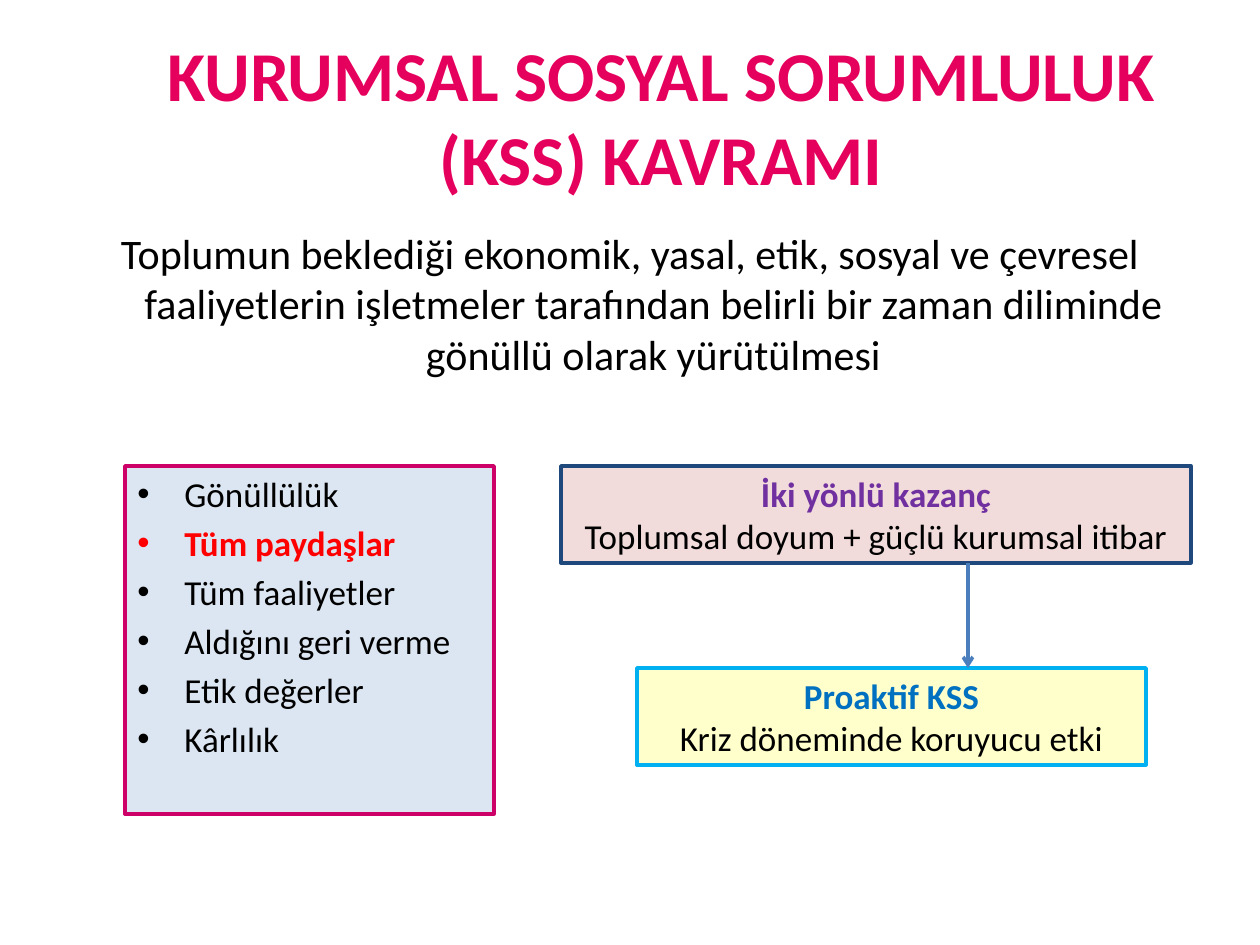
from lxml.etree import SubElement
from pptx import Presentation
from pptx.dml.color import RGBColor
from pptx.enum.shapes import MSO_CONNECTOR, MSO_SHAPE
from pptx.enum.text import MSO_ANCHOR, PP_ALIGN
from pptx.oxml.ns import qn
from pptx.util import Emu, Pt

PINK = RGBColor(0xE6, 0x00, 0x5D)
MAGENTA = RGBColor(0xCC, 0x00, 0x66)
PALE_BLUE = RGBColor(0xDC, 0xE6, 0xF2)
PALE_RED = RGBColor(0xF2, 0xDC, 0xDB)
PALE_YELLOW = RGBColor(0xFF, 0xFF, 0xCC)
NAVY = RGBColor(0x1F, 0x49, 0x7D)
CYAN = RGBColor(0x00, 0xB0, 0xF0)
BLUE = RGBColor(0x00, 0x70, 0xC0)
ARROW_BLUE = RGBColor(0x4B, 0x7E, 0xBC)
PURPLE = RGBColor(0x70, 0x30, 0xA0)
RED = RGBColor(0xFF, 0x00, 0x00)
BLACK = RGBColor(0x00, 0x00, 0x00)

PX = 914400 / 126
HANGING = 47


def px(*lengths):
    return [Emu(round(length * PX)) for length in lengths]


def add_run(paragraph, text, size, color, bold=False):
    run = paragraph.add_run()
    run.text = text
    run.font.name = "Calibri"
    run.font.size = Pt(size)
    run.font.bold = bold
    run.font.color.rgb = color


prs = Presentation()
prs.slide_width, prs.slide_height = px(1260, 945)
slide = prs.slides.add_slide(prs.slide_layouts[5])
shapes = slide.shapes

title = shapes.title
title.left, title.top, title.width, title.height = px(94, 37, 1134, 157)
title.text_frame.vertical_anchor = MSO_ANCHOR.MIDDLE
heading = title.text_frame.paragraphs[0]
heading.alignment = PP_ALIGN.CENTER
add_run(heading, "KURUMSAL SOSYAL SORUMLULUK (KSS) KAVRAMI", 40, PINK, True)

definition = shapes.add_textbox(*px(63, 221, 1134, 173)).text_frame
definition.word_wrap = True
sentence = definition.paragraphs[0]
sentence.alignment = PP_ALIGN.CENTER
indent, = px(HANGING)
sentence_props = sentence._p.get_or_add_pPr()
sentence_props.set("marL", str(indent))
sentence_props.set("indent", str(-indent))
add_run(
    sentence,
    "Toplumun beklediği ekonomik, yasal, etik, sosyal ve çevresel "
    "faaliyetlerin işletmeler tarafından belirli bir zaman diliminde "
    "gönüllü olarak yürütülmesi",
    24,
    BLACK,
)

principles = [
    ("Gönüllülük", BLACK, False),
    ("Tüm paydaşlar", RED, True),
    ("Tüm faaliyetler", BLACK, False),
    ("Aldığını geri verme", BLACK, False),
    ("Etik değerler", BLACK, False),
    ("Kârlılık", BLACK, False),
]
mutual_gain = [
    ("İki yönlü kazanç", PURPLE, True),
    ("Toplumsal doyum + güçlü kurumsal itibar", BLACK, False),
]
proactive = [
    ("Proaktif KSS", BLUE, True),
    ("Kriz döneminde koruyucu etki", BLACK, False),
]
panels = [
    ((125, 466, 369, 348), PALE_BLUE, MAGENTA, principles, True),
    ((561, 466, 630, 97), PALE_RED, NAVY, mutual_gain, False),
    ((637, 668, 509, 97), PALE_YELLOW, CYAN, proactive, False),
]
for bounds, fill, border, lines, bulleted in panels:
    panel = shapes.add_shape(MSO_SHAPE.RECTANGLE, *px(*bounds))
    panel.shadow.inherit = False
    panel.fill.solid()
    panel.fill.fore_color.rgb = fill
    panel.line.color.rgb = border
    panel.line.width = Pt(2)
    frame = panel.text_frame
    frame.word_wrap = True
    frame.vertical_anchor = MSO_ANCHOR.TOP
    for index, (text, color, bold) in enumerate(lines):
        paragraph = frame.add_paragraph() if index else frame.paragraphs[0]
        paragraph.alignment = PP_ALIGN.JUSTIFY if bulleted else PP_ALIGN.CENTER
        if bulleted:
            if index:
                paragraph.space_before = Pt(4)
            props = paragraph._p.get_or_add_pPr()
            props.set("marL", str(indent))
            props.set("indent", str(-indent))
            SubElement(props, qn("a:buFont"), typeface="Arial")
            SubElement(props, qn("a:buChar"), char="•")
        add_run(paragraph, text, 20, color, bold)

arrow = shapes.add_connector(MSO_CONNECTOR.STRAIGHT, *px(968, 563, 968, 668))
arrow.line.color.rgb = ARROW_BLUE
arrow.line.width = Pt(2)
SubElement(arrow.line._get_or_add_ln(), qn("a:tailEnd"), type="arrow")
SubElement(arrow._element.spPr, qn("a:effectLst"))

prs.save("out.pptx")
